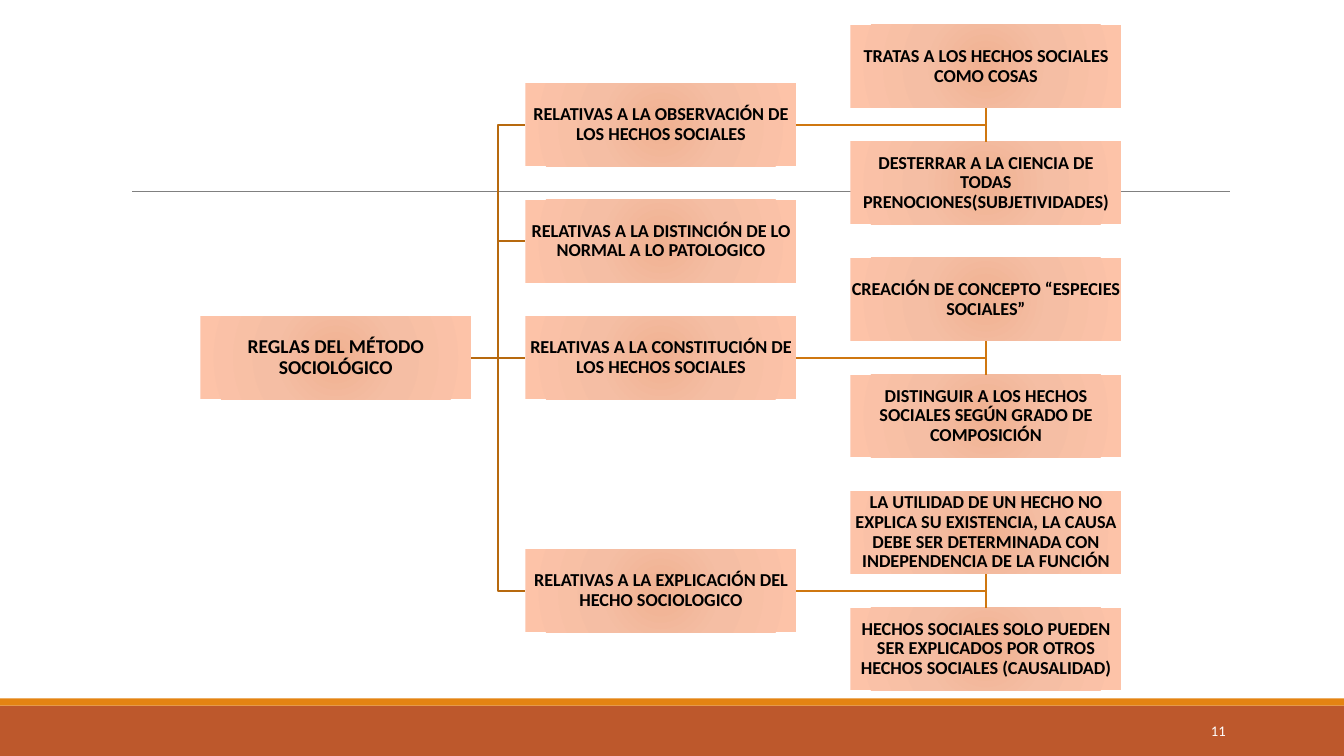
from lxml import etree
from pptx import Presentation
from pptx.dml.color import RGBColor
from pptx.enum.shapes import MSO_CONNECTOR, MSO_SHAPE
from pptx.enum.text import MSO_ANCHOR, PP_ALIGN
from pptx.oxml.ns import qn
from pptx.util import Cm, Pt

RECTANGLE = MSO_SHAPE.RECTANGLE
STRAIGHT = MSO_CONNECTOR.STRAIGHT
MIDDLE = MSO_ANCHOR.MIDDLE
CENTER, RIGHT = PP_ALIGN.CENTER, PP_ALIGN.RIGHT
LEFT_SIDE, RIGHT_SIDE = 1, 3

FONT = "Calibri"
ROOT_LINE, RULE_LINE = "B7690E", "CF7710"
BOX_STOPS = [(0, "F0B191"), (45, "F5BEA4"), (100, "FDC3A8")]

BOX_WIDTH, BOX_HEIGHT = Cm(6.83), Cm(2.09)
COLUMN_STEP, HALF_ROW = Cm(8.19), Cm(1.468)

ROOT = "REGLAS DEL MÉTODO SOCIOLÓGICO"
ROOT_ROW = 5
# Each branch: its half row, its text and the rules that follow from it.
BRANCHES = [
    (1, "RELATIVAS A LA OBSERVACIÓN DE LOS HECHOS SOCIALES", [
        "TRATAS A LOS HECHOS SOCIALES COMO COSAS",
        "DESTERRAR A LA CIENCIA DE TODAS PRENOCIONES(SUBJETIVIDADES)"]),
    (3, "RELATIVAS A LA DISTINCIÓN DE LO NORMAL A LO PATOLOGICO", []),
    (5, "RELATIVAS A LA CONSTITUCIÓN DE LOS HECHOS SOCIALES", [
        "CREACIÓN DE CONCEPTO “ESPECIES SOCIALES”",
        "DISTINGUIR A LOS HECHOS SOCIALES SEGÚN GRADO DE COMPOSICIÓN"]),
    (9, "RELATIVAS A LA EXPLICACIÓN DEL HECHO SOCIOLOGICO", [
        "LA UTILIDAD DE UN HECHO NO EXPLICA SU EXISTENCIA, LA CAUSA DEBE SER "
        "DETERMINADA CON INDEPENDENCIA DE LA FUNCIÓN",
        "HECHOS SOCIALES SOLO PUEDEN SER EXPLICADOS POR OTROS HECHOS SOCIALES "
        "(CAUSALIDAD)"]),
]


def color(value):
    return RGBColor.from_string(value)


def write(shape, text, size, ink, alignment, bold=False):
    frame = shape.text_frame
    frame.word_wrap = True
    frame.vertical_anchor = MIDDLE
    para = frame.paragraphs[0]
    para.alignment = alignment
    para.line_spacing = 0.9
    span = para.add_run()
    span.text = text
    span.font.name = FONT
    span.font.size = Pt(size)
    span.font.bold = bold
    span.font.color.rgb = color(ink)


def add_band(page, left, top, width, height, fill):
    band = page.shapes.add_shape(RECTANGLE, left, top, width, height)
    band.shadow.inherit = False
    band.fill.solid()
    band.fill.fore_color.rgb = color(fill)
    band.line.fill.background()


def add_straight(page, start, end, ink, width):
    line = page.shapes.add_connector(STRAIGHT, *start, *end)
    line.line.color.rgb = color(ink)
    line.line.width = Pt(width)
    etree.SubElement(line._element.spPr, qn("a:effectLst"))
    return line


def add_path(page, points, ink):
    """Draw an open line with square bends through the points."""
    builder = page.shapes.build_freeform(*points[0])
    builder.add_line_segments(points[1:], close=False)
    path = builder.convert_to_shape()
    path.shadow.inherit = False
    path.fill.background()
    path.line.color.rgb = color(ink)
    path.line.width = Pt(1.25)


def fill_radial(shape, stops):
    """Fill the shape with a gradient that spreads from its centre."""
    gradient = etree.Element(qn("a:gradFill"), rotWithShape="1")
    stop_list = etree.SubElement(gradient, qn("a:gsLst"))
    for percent, value in stops:
        stop = etree.SubElement(stop_list, qn("a:gs"), pos=str(percent * 1000))
        etree.SubElement(stop, qn("a:srgbClr"), val=value)
    circle = etree.SubElement(gradient, qn("a:path"), path="circle")
    etree.SubElement(circle, qn("a:fillToRect"),
                     {side: "100000" for side in "ltrb"})
    shape._element.spPr.find(qn("a:prstGeom")).addnext(gradient)


def add_box(page, left, top, column, row, text, size=13):
    """Add a tree box, with its place counted in columns and half rows."""
    box = page.shapes.add_shape(RECTANGLE, left + column * COLUMN_STEP,
                                top + row * HALF_ROW, BOX_WIDTH, BOX_HEIGHT)
    box.shadow.inherit = False
    box.line.fill.background()
    fill_radial(box, BOX_STOPS)
    frame = box.text_frame
    frame.margin_left = frame.margin_right = Cm(0.03)
    frame.margin_top = frame.margin_bottom = Cm(0.03)
    write(box, text, size, "000000", CENTER, bold=True)
    return box


def right_middle(box):
    return box.left + box.width, box.top + box.height // 2


def join_branch(page, root, branch):
    start_x, start_y = right_middle(root)
    end_x, end_y = branch.left, right_middle(branch)[1]
    if start_y == end_y:
        line = add_straight(page, (start_x, start_y), (end_x, end_y),
                            ROOT_LINE, 1.25)
        line.begin_connect(root, RIGHT_SIDE)
        line.end_connect(branch, LEFT_SIDE)
    else:
        bend_x = (start_x + end_x) // 2
        add_path(page, [(start_x, start_y), (bend_x, start_y),
                        (bend_x, end_y), (end_x, end_y)], ROOT_LINE)


def join_rule(page, branch, rule):
    start_x, start_y = right_middle(branch)
    end_x = rule.left + rule.width // 2
    end_y = rule.top if rule.top > branch.top else rule.top + rule.height
    add_path(page, [(start_x, start_y), (end_x, start_y), (end_x, end_y)],
             RULE_LINE)


def draw_tree(page, left, top):
    root = add_box(page, left, top, 0, ROOT_ROW, ROOT, size=14)
    for row, text, rules in BRANCHES:
        branch = add_box(page, left, top, 1, row, text)
        join_branch(page, root, branch)
        for rule_row, rule_text in zip((row - 1, row + 1), rules):
            rule = add_box(page, left, top, 2, rule_row, rule_text)
            join_rule(page, branch, rule)


def draw_footer(page, top, width, height):
    stripe = Cm(0.18)
    add_band(page, 0, top + stripe, width, height - stripe, "BD582C")
    add_band(page, 0, top, width, stripe, "E48312")
    number = page.shapes.add_textbox(Cm(27.51), top + Cm(0.33),
                                     Cm(3.63), Cm(1.02))
    write(number, "11", 10.5, "FFFFFF", RIGHT)


def main():
    deck = Presentation()
    deck.slide_width, deck.slide_height = Cm(33.87), Cm(19.05)
    page = deck.slides.add_slide(deck.slide_layouts[6])
    footer_top = Cm(17.6)
    draw_footer(page, footer_top, deck.slide_width,
                deck.slide_height - footer_top)
    add_straight(page, (Cm(3.33), Cm(4.82)), (Cm(31), Cm(4.82)), "808080", 0.5)
    draw_tree(page, Cm(5.05), Cm(0.63))
    deck.save("out.pptx")


if __name__ == "__main__":
    main()
